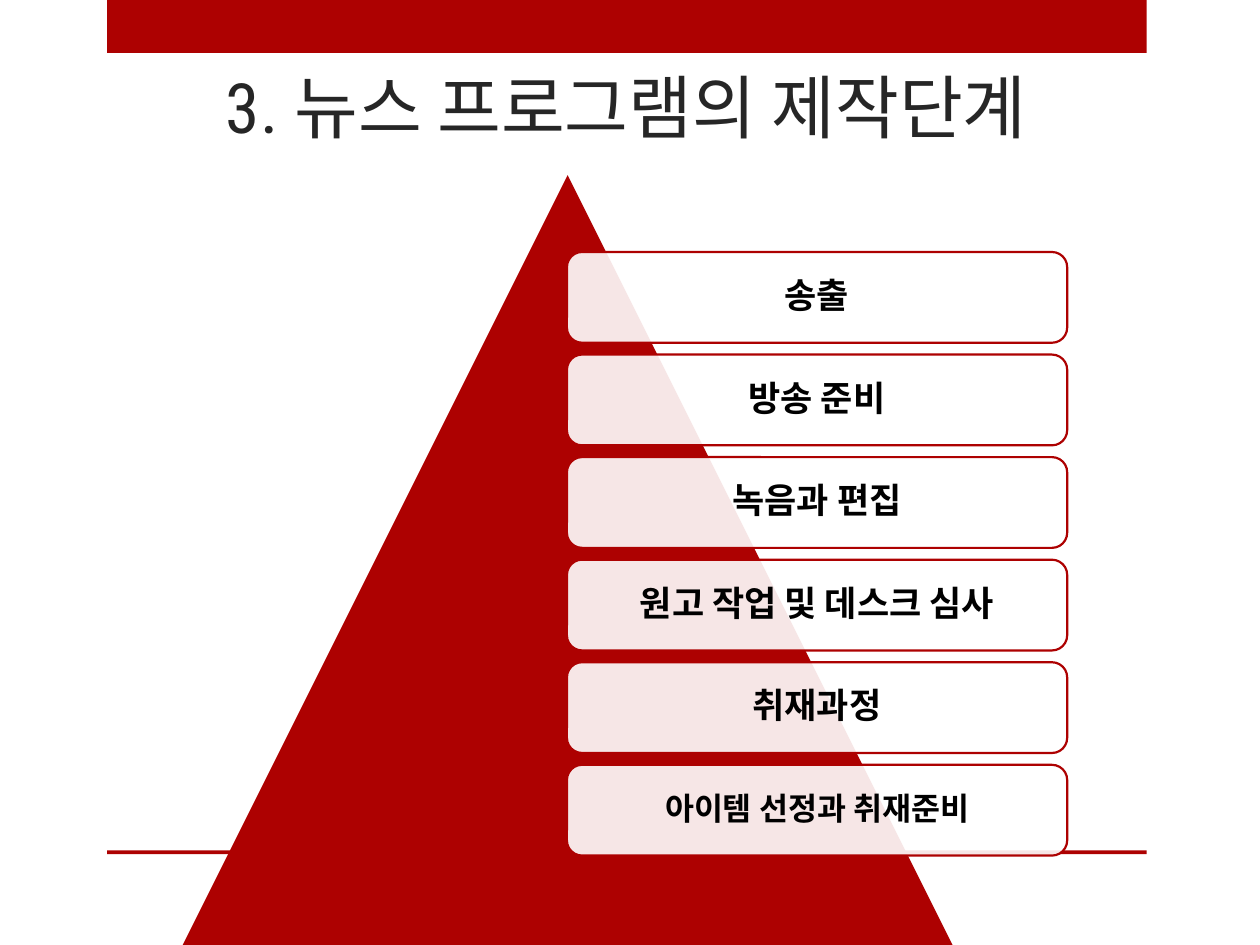
from lxml.etree import SubElement
from pptx import Presentation
from pptx.dml.color import RGBColor
from pptx.enum.shapes import MSO_SHAPE
from pptx.enum.text import MSO_ANCHOR, MSO_AUTO_SIZE, PP_ALIGN
from pptx.oxml.ns import qn
from pptx.util import Inches, Pt

TITLE = "3. 뉴스 프로그램의 제작단계"
STAGES = [
    ("송출", 20),
    ("방송 준비", 20),
    ("녹음과 편집", 20),
    ("원고 작업 및 데스크 심사", 20),
    ("취재과정", 20),
    ("아이템 선정과 취재준비", 18),
]
RED, WHITE, BLACK, DARK = "AD0101", "FFFFFF", "000000", "262626"
KOREAN, LATIN = "Noto Sans CJK KR", "Roboto Condensed"
BANDS = [(0.85, 0, 8.25, 0.42), (0.85, 6.75, 8.25, 0.03)]
PYRAMID = (1.45, 1.39, 6.11, 6.11)
STAGE_LEFT, STAGE_TOP, STAGE_WIDTH, STAGE_HEIGHT = 4.5, 2, 3.97, 0.72
STAGE_PITCH = 0.814


def color(hex_value):
    return RGBColor.from_string(hex_value)


def add_filled(shapes, kind, box, fill):
    shape = shapes.add_shape(kind, *map(Inches, box))
    shape.shadow.inherit = False
    shape.fill.solid()
    shape.fill.fore_color.rgb = color(fill)
    shape.line.fill.background()
    return shape


def write(shape, text, anchor, margin, latin, size, ink, bold=False):
    """Put one centred line into a shape, with a Korean font for the Hangul."""
    frame = shape.text_frame
    settings = {
        "word_wrap": True,
        "auto_size": MSO_AUTO_SIZE.NONE,
        "vertical_anchor": anchor,
    }
    for side in ("left", "top", "right", "bottom"):
        settings[f"margin_{side}"] = Inches(margin)
    for name, value in settings.items():
        setattr(frame, name, value)
    paragraph = frame.paragraphs[0]
    paragraph.alignment = PP_ALIGN.CENTER
    paragraph.line_spacing = 0.9
    run = paragraph.add_run()
    run.text = text
    for name, value in {"name": latin, "size": Pt(size), "bold": bold}.items():
        setattr(run.font, name, value)
    run.font.color.rgb = color(ink)
    SubElement(run._r.get_or_add_rPr(), qn("a:ea"), typeface=KOREAN)


prs = Presentation()
prs.slide_width, prs.slide_height = Inches(10), Inches(7.5)
slide = prs.slides.add_slide(prs.slide_layouts[5])

for band in BANDS:
    add_filled(slide.shapes, MSO_SHAPE.RECTANGLE, band, RED)

title = slide.shapes.title
title.left, title.top, title.width, title.height = map(Inches, (0.84, 0.42, 8.26, 0.81))
write(title, TITLE, MSO_ANCHOR.BOTTOM, 0.05, LATIN, 39.6, DARK)

diagram = slide.shapes.add_group_shape()
add_filled(diagram.shapes, MSO_SHAPE.ISOSCELES_TRIANGLE, PYRAMID, RED)
for row, (label, size) in enumerate(STAGES):
    box = (STAGE_LEFT, STAGE_TOP + row * STAGE_PITCH, STAGE_WIDTH, STAGE_HEIGHT)
    stage = add_filled(diagram.shapes, MSO_SHAPE.ROUNDED_RECTANGLE, box, WHITE)
    fill_color = stage.fill._xPr.find(qn("a:solidFill"))[0]
    SubElement(fill_color, qn("a:alpha"), val="90000")
    stage.line.color.rgb = color(RED)
    stage.line.width = Pt(1.25)
    write(stage, label, MSO_ANCHOR.MIDDLE, 0.08, KOREAN, size, BLACK, bold=True)

prs.save("out.pptx")
